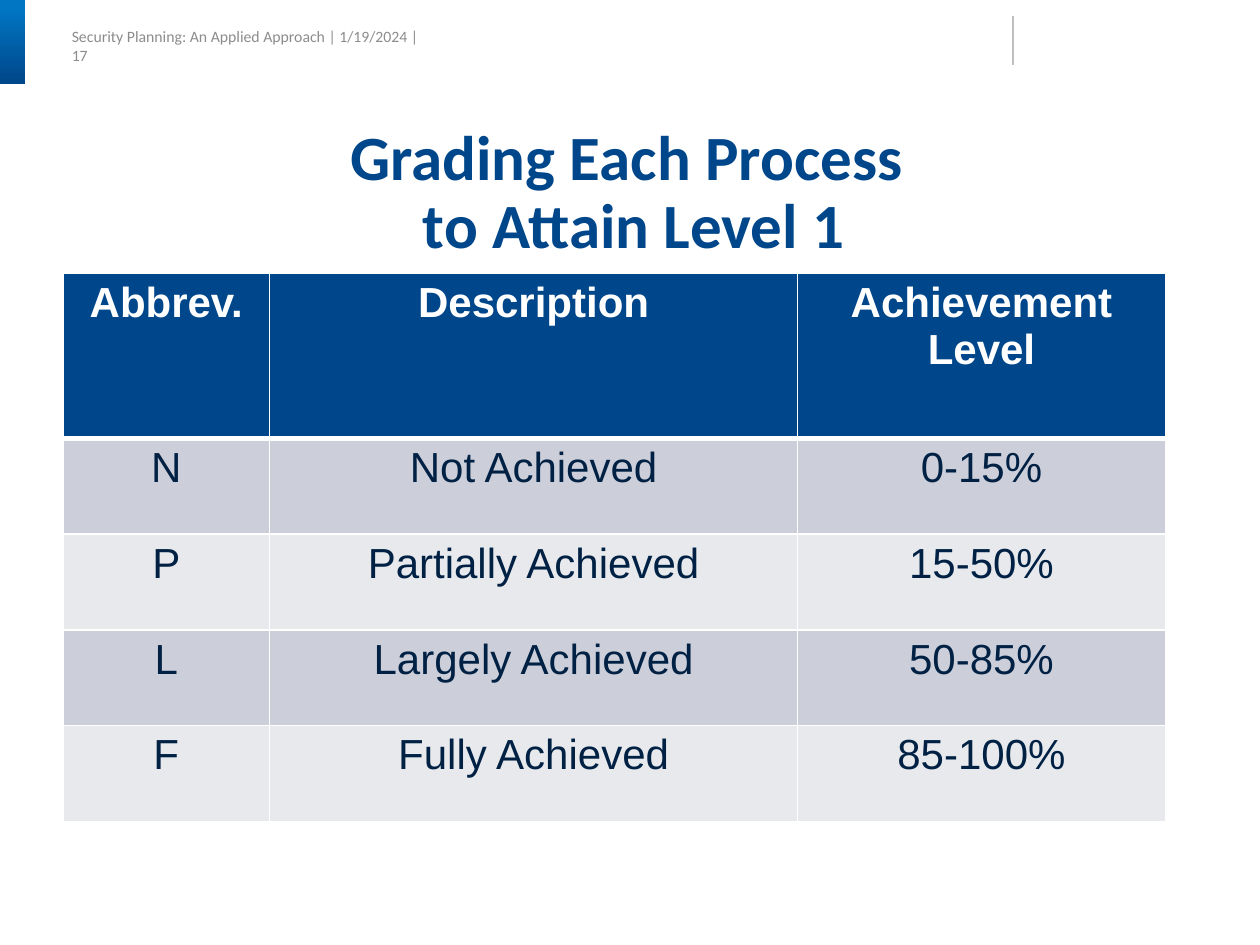
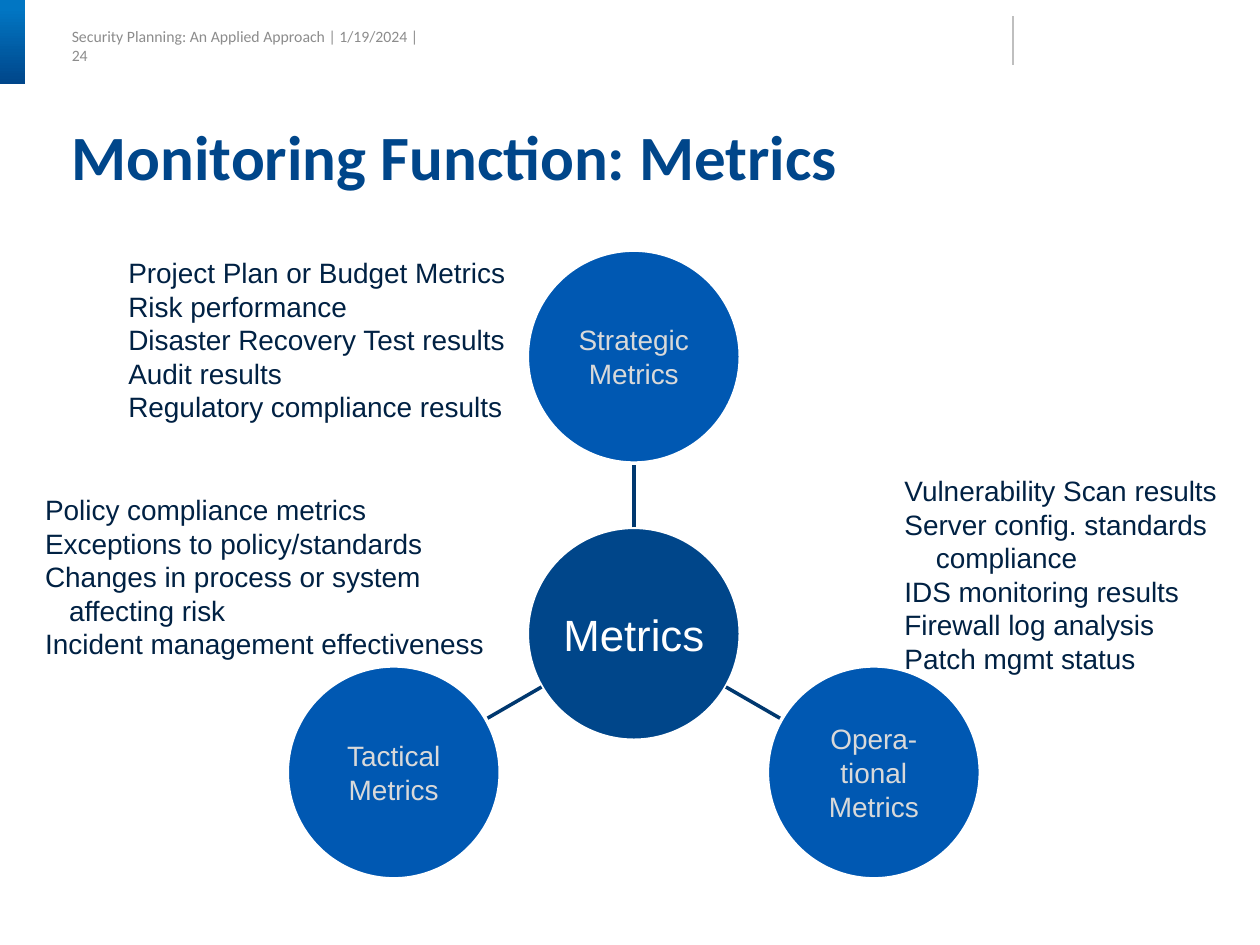
"""Build two security planning slides: a process grading table and a metrics wheel."""
from dataclasses import dataclass
from math import cos, radians, sin

from lxml.etree import SubElement
from pptx import Presentation
from pptx.dml.color import RGBColor
from pptx.enum.shapes import MSO_CONNECTOR, MSO_SHAPE
from pptx.enum.text import MSO_ANCHOR, MSO_AUTO_SIZE, PP_ALIGN
from pptx.oxml.ns import qn
from pptx.util import Inches, Pt


@dataclass(frozen=True)
class Theme:
    heading_font: str = "Calibri"
    body_font: str = "Arial"
    navy: str = "00468A"
    sky: str = "0176C3"
    blue: str = "0058B2"
    spoke: str = "00386F"
    ink: str = "002143"
    white: str = "FFFFFF"
    pale: str = "D9D9D9"
    rule: str = "BFBFBF"
    footer: str = "8C8C8C"
    bands: tuple = ("CCCFDA", "E7E9ED")
    title_size: float = 36
    hub_size: float = 25
    table_size: float = 24
    text_size: float = 16
    footer_size: float = 9


theme = Theme()


def add_run(paragraph, text, size, color, font=theme.body_font, bold=False):
    run = paragraph.add_run()
    run.text = text
    run.font.name = font
    run.font.size = Pt(size)
    run.font.bold = bold
    run.font.color.rgb = RGBColor.from_string(color)


def add_line(slide, start, end, color, width):
    connector = slide.shapes.add_connector(
        MSO_CONNECTOR.STRAIGHT, *[Inches(value) for value in (*start, *end)])
    connector.line.color.rgb = RGBColor.from_string(color)
    connector.line.width = Pt(width)
    SubElement(connector._element.spPr, qn("a:effectLst"))


presentation = Presentation()
presentation.slide_width = Inches(10)
presentation.slide_height = Inches(7.5)

headings = [
    (17, ["Grading Each Process ", "to Attain Level 1"], PP_ALIGN.CENTER),
    (24, ["Monitoring Function: Metrics"], PP_ALIGN.LEFT),
]
slides = []
for number, title_lines, alignment in headings:
    slide = presentation.slides.add_slide(presentation.slide_layouts[5])
    slides.append(slide)

    footer = slide.shapes.add_textbox(Inches(0.57), Inches(0.26), Inches(2.84), Inches(0.2))
    frame = footer.text_frame
    frame.margin_left = frame.margin_right = frame.margin_top = frame.margin_bottom = 0
    frame.vertical_anchor = MSO_ANCHOR.MIDDLE
    frame.word_wrap = False
    add_run(frame.paragraphs[0], f"Security Planning: An Applied Approach | 1/19/2024 | {number}",
            theme.footer_size, theme.footer, theme.heading_font)

    band = slide.shapes.add_shape(MSO_SHAPE.RECTANGLE, 0, 0, Inches(0.2), Inches(0.67))
    band.shadow.inherit = False
    band.line.fill.background()
    band.fill.gradient()
    band.fill.gradient_angle = 270
    for stop, position, color in zip(band.fill.gradient_stops, (0.1, 1), (theme.sky, theme.navy)):
        stop.position = position
        stop.color.rgb = RGBColor.from_string(color)

    add_line(slide, (8.04, 0.13), (8.04, 0.52), theme.rule, 0.75)

    title = slide.shapes.title
    title.left, title.top = Inches(0.57), Inches(1)
    title.width, title.height = Inches(8.92), Inches(0.55)
    frame = title.text_frame
    frame.margin_left = frame.margin_right = frame.margin_top = frame.margin_bottom = 0
    frame.vertical_anchor = MSO_ANCHOR.TOP
    frame.auto_size = MSO_AUTO_SIZE.NONE
    frame.word_wrap = True
    paragraph = frame.paragraphs[0]
    paragraph.alignment = alignment
    paragraph.line_spacing = 0.9
    for index, line in enumerate(title_lines):
        if index:
            paragraph.add_line_break()
        add_run(paragraph, line, theme.title_size, theme.navy, theme.heading_font, bold=True)

grading_slide, metrics_slide = slides

grades = [
    ("Abbrev.", "Description", "Achievement Level"),
    ("N", "Not Achieved", "0-15%"),
    ("P", "Partially Achieved", "15-50%"),
    ("L", "Largely Achieved", "50-85%"),
    ("F", "Fully Achieved", "85-100%"),
]
table = grading_slide.shapes.add_table(
    len(grades), 3, Inches(0.5), Inches(2.17), Inches(8.75), Inches(4.33)).table
for column, width in zip(table.columns, (1.64, 4.19, 2.92)):
    column.width = Inches(width)
for row_index, values in enumerate(grades):
    is_header = row_index == 0
    table.rows[row_index].height = Inches(1.31 if is_header else 0.76)
    fill_color = theme.navy if is_header else theme.bands[(row_index - 1) % 2]
    for column_index, value in enumerate(values):
        cell = table.cell(row_index, column_index)
        properties = cell._tc.get_or_add_tcPr()
        for side in ("lnL", "lnR", "lnT", "lnB"):
            is_heavy = (row_index, side) in ((0, "lnB"), (1, "lnT"))
            border = SubElement(properties, qn(f"a:{side}"), w=str(Pt(3 if is_heavy else 1)))
            border_fill = SubElement(border, qn("a:solidFill"))
            SubElement(border_fill, qn("a:srgbClr"), val=theme.white)
        cell.fill.solid()
        cell.fill.fore_color.rgb = RGBColor.from_string(fill_color)
        paragraph = cell.text_frame.paragraphs[0]
        paragraph.alignment = PP_ALIGN.CENTER
        add_run(paragraph, value, theme.table_size,
                theme.white if is_header else theme.ink, bold=is_header)

center, radius, orbit = 5.03, 0.845, 2.2
circles = [
    (None, ["Metrics"], theme.navy, theme.white, theme.hub_size),
    (-90, ["Strategic", "Metrics"], theme.blue, theme.pale, theme.text_size),
    (30, ["Opera-", "tional", "Metrics"], theme.blue, theme.pale, theme.text_size),
    (150, ["Tactical", "Metrics"], theme.blue, theme.pale, theme.text_size),
]
for angle, lines, fill_color, text_color, size in circles:
    x = y = center
    if angle is not None:
        across, down = cos(radians(angle)), sin(radians(angle))
        x, y = center + orbit * across, center + orbit * down
        start, end = [(center + reach * across, center + reach * down)
                      for reach in (radius, orbit - radius)]
        add_line(metrics_slide, start, end, theme.spoke, 2)
    circle = metrics_slide.shapes.add_shape(
        MSO_SHAPE.OVAL, Inches(x - radius), Inches(y - radius),
        Inches(2 * radius), Inches(2 * radius))
    circle.shadow.inherit = False
    circle.fill.solid()
    circle.fill.fore_color.rgb = RGBColor.from_string(fill_color)
    circle.line.color.rgb = RGBColor.from_string(theme.white)
    circle.line.width = Pt(2)
    frame = circle.text_frame
    frame.margin_left = frame.margin_right = frame.margin_top = frame.margin_bottom = Inches(0.01)
    frame.vertical_anchor = MSO_ANCHOR.MIDDLE
    frame.word_wrap = True
    for index, line in enumerate(lines):
        paragraph = frame.add_paragraph() if index else frame.paragraphs[0]
        paragraph.alignment = PP_ALIGN.CENTER
        add_run(paragraph, line, size, text_color)

metric_lists = [
    ((0.92, 1.98, 3.23, 1.45), [
        ("Project Plan or Budget Metrics", 0), ("Risk performance", 0),
        ("Disaster Recovery Test results", 0), ("Audit results", 0),
        ("Regulatory compliance results", 0)]),
    ((0.26, 3.86, 3.73, 1.45), [
        ("Policy compliance metrics", 0), ("Exceptions to policy/standards", 0),
        ("Changes in process or system", 0), ("affecting risk", 0.19),
        ("Incident management effectiveness", 0)]),
    ((7.08, 3.71, 2.71, 1.75), [
        ("Vulnerability Scan results", 0), ("Server config. standards", 0),
        ("compliance", 0.25), ("IDS monitoring results", 0),
        ("Firewall log analysis", 0), ("Patch mgmt status", 0)]),
]
for bounds, entries in metric_lists:
    box = metrics_slide.shapes.add_textbox(*[Inches(value) for value in bounds])
    frame = box.text_frame
    frame.word_wrap = False
    for index, (text, indent) in enumerate(entries):
        paragraph = frame.add_paragraph() if index else frame.paragraphs[0]
        if indent:
            paragraph._p.get_or_add_pPr().set("marL", str(Inches(indent)))
        add_run(paragraph, text, theme.text_size, theme.ink)

presentation.save("out.pptx")
